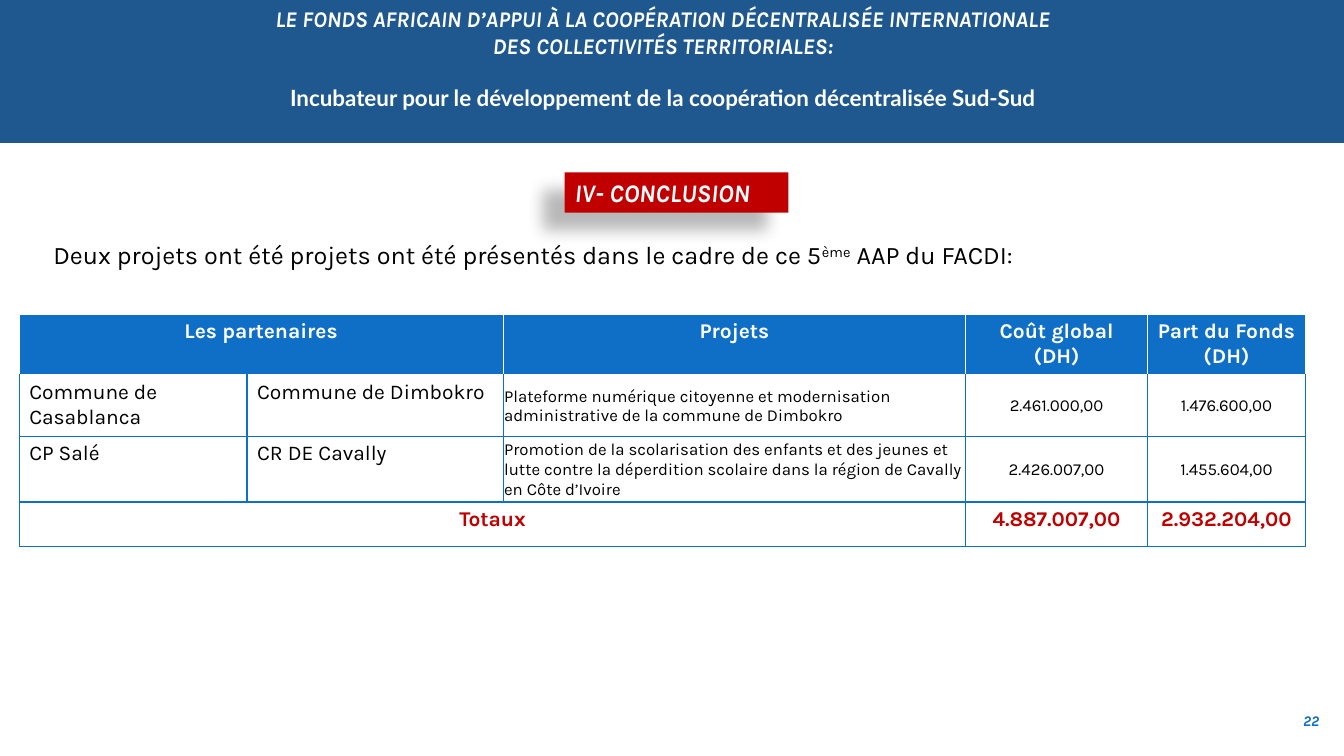
from lxml import etree
from pptx import Presentation
from pptx.dml.color import RGBColor
from pptx.enum.shapes import MSO_SHAPE as SHAPE
from pptx.enum.text import MSO_ANCHOR as ANCHOR, PP_ALIGN as ALIGN
from pptx.oxml import parse_xml
from pptx.oxml.ns import nsdecls, qn
from pptx.util import Inches, Pt

COLORS = {"band": "1F588E", "blue": "0F6FC6", "red": "C00000",
          "white": "FFFFFF", "black": "000000"}

COL_WIDTHS = [2.26, 2.54, 4.59, 1.8, 1.57]
ROW_HEIGHTS = [0.59, 0.61, 0.65, 0.44]
ROWS = [
    ["Les partenaires", "", "Projets", "Coût global (DH)", "Part du Fonds (DH)"],
    ["Commune de Casablanca", "Commune de Dimbokro",
     "Plateforme numérique citoyenne et modernisation administrative "
     "de la commune de Dimbokro", "2.461.000,00", "1.476.600,00"],
    ["CP Salé", "CR DE Cavally",
     "Promotion de la scolarisation des enfants et des jeunes et lutte contre "
     "la déperdition scolaire dans la région de Cavally en Côte d’Ivoire",
     "2.426.007,00", "1.455.604,00"],
    ["Totaux", "", "", "4.887.007,00", "2.932.204,00"],
]


def rgb(name):
    return RGBColor.from_string(COLORS[name])


def style(p, size, color, bold=False, italic=False, name="Karla", align=ALIGN.LEFT):
    p.alignment = align
    f = p.font
    f.name, f.size, f.bold, f.italic = name, Pt(size), bold, italic
    f.color.rgb = rgb(color)


def add_text(s, x, y, w, h, anchor=ANCHOR.TOP):
    tf = s.shapes.add_textbox(Inches(x), Inches(y), Inches(w), Inches(h)).text_frame
    tf.word_wrap = True
    tf.vertical_anchor = anchor
    return tf


def add_block(s, shape, x, y, w, h, color):
    sp = s.shapes.add_shape(shape, Inches(x), Inches(y), Inches(w), Inches(h))
    sp.shadow.inherit = False
    sp.fill.solid()
    sp.fill.fore_color.rgb = rgb(color)
    sp.line.fill.background()
    return sp


def add_header(s, x, y, w, h):
    band = add_block(s, SHAPE.PARALLELOGRAM, x, y, w, h, "band")
    band.adjustments[0] = 0
    tf = add_text(s, x + 1.34, y, 10.47, h)
    p = tf.paragraphs[0]
    p.text = ("LE FONDS AFRICAIN D’APPUI À LA COOPÉRATION DÉCENTRALISÉE INTERNATIONALE"
              "\vDES COLLECTIVITÉS TERRITORIALES:")
    style(p, 16, "white", bold=True, italic=True, align=ALIGN.CENTER)
    p = tf.add_paragraph()
    p.text = "Incubateur pour le développement de la coopération décentralisée Sud-Sud"
    p.space_before = Pt(18.5)
    style(p, 16, "white", bold=True, name="Lato", align=ALIGN.CENTER)


def add_section_label(s, x, y, w, h):
    label = add_block(s, SHAPE.RECTANGLE, x, y, w, h, "red")
    effects = label._element.spPr.find(qn("a:effectLst"))
    effects.append(parse_xml(
        f'<a:outerShdw {nsdecls("a")} blurRad="{Pt(11.8)}" dist="{Pt(19.7)}" '
        f'dir="{141 * 60000}" algn="tr" rotWithShape="0">'
        f'<a:srgbClr val="{COLORS["black"]}"><a:alpha val="28000"/></a:srgbClr>'
        '</a:outerShdw>'))
    tf = label.text_frame
    tf.vertical_anchor = ANCHOR.TOP
    p = tf.paragraphs[0]
    p.text = "IV- CONCLUSION"
    style(p, 18, "white", bold=True, italic=True)


def add_intro(s, x, y, w, h):
    p = add_text(s, x, y, w, h).paragraphs[0]
    style(p, 18, "black")
    for text, raised in [
            ("Deux projets ont été projets ont été présentés dans le cadre de ce 5", False),
            ("ème", True), (" AAP du FACDI:", False)]:
        r = p.add_run()
        r.text = text
        if raised:
            r.font._element.set("baseline", "30000")


def set_borders(cell, sides):
    tcPr = cell._tc.get_or_add_tcPr()
    for side in "LRTB":
        ln = etree.SubElement(tcPr, qn(f"a:ln{side}"), w=str(Pt(1)))
        fill = etree.SubElement(ln, qn("a:solidFill"))
        etree.SubElement(fill, qn("a:srgbClr"), val=COLORS[sides[side]])


def fill_cell(cell, row, col, text):
    header, total = row == 0, row == len(ROWS) - 1
    detail = not header and not total and col >= 2
    sides = dict.fromkeys("LRTB", "white" if header else "blue")
    if row == 1:
        sides["T"] = "white"
    set_borders(cell, sides)
    if header:
        cell.fill.solid()
        cell.fill.fore_color.rgb = rgb("blue")
    else:
        cell.fill.background()
    if detail:
        cell.vertical_anchor = ANCHOR.MIDDLE
        cell.margin_left = cell.margin_right = cell.margin_top = Inches(0.01)
        cell.margin_bottom = 0
    p = cell.text_frame.paragraphs[0]
    p.text = text
    centred = header or total or col >= 3
    style(p, 12 if detail else 15,
          "white" if header else "red" if total else "black",
          bold=header or total, align=ALIGN.CENTER if centred else ALIGN.LEFT)


def add_projects_table(s, x, y):
    table = s.shapes.add_table(
        len(ROWS), len(COL_WIDTHS), Inches(x), Inches(y),
        Inches(sum(COL_WIDTHS)), Inches(sum(ROW_HEIGHTS))).table
    table.first_row = table.horz_banding = False
    for column, width in zip(table.columns, COL_WIDTHS):
        column.width = Inches(width)
    for i, (height, texts) in enumerate(zip(ROW_HEIGHTS, ROWS)):
        table.rows[i].height = Inches(height)
        for j, text in enumerate(texts):
            fill_cell(table.cell(i, j), i, j, text)
    table.cell(0, 0).merge(table.cell(0, 1))
    table.cell(3, 0).merge(table.cell(3, 2))


def add_page_number(s, x, y, w, h):
    p = add_text(s, x, y, w, h, ANCHOR.MIDDLE).paragraphs[0]
    p.text = "22"
    style(p, 10.5, "blue", bold=True, italic=True, align=ALIGN.RIGHT)


def main():
    prs = Presentation()
    prs.slide_width, prs.slide_height = Inches(13.33), Inches(7.5)
    s = prs.slides.add_slide(prs.slide_layouts[6])
    add_header(s, 0, 0, 13.33, 1.42)
    add_section_label(s, 5.6, 1.71, 2.22, 0.4)
    add_intro(s, 0.43, 2.33, 12.42, 0.4)
    add_projects_table(s, 0.19, 3.12)
    add_page_number(s, 12.57, 6.95, 0.61, 0.4)
    prs.save("out.pptx")


if __name__ == "__main__":
    main()
